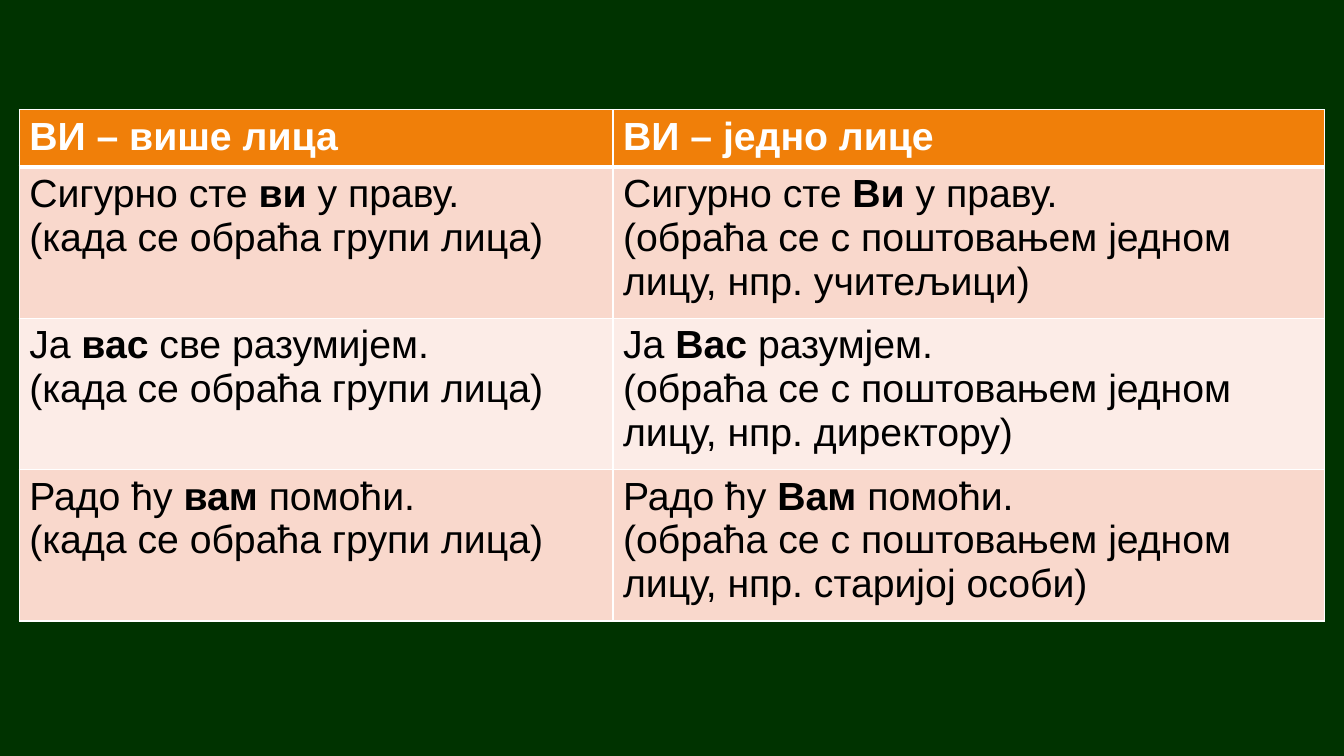
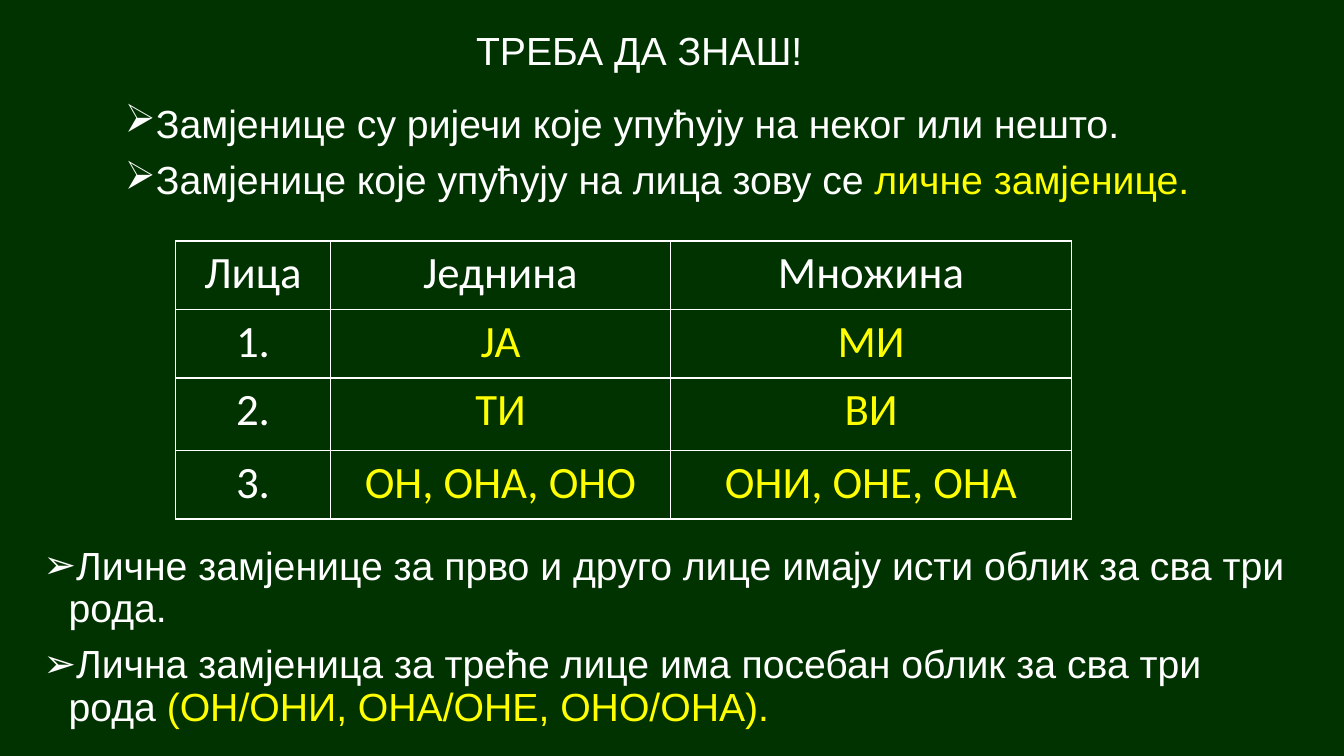
from lxml.etree import SubElement
from pptx import Presentation
from pptx.dml.color import RGBColor
from pptx.enum.text import MSO_ANCHOR, MSO_AUTO_SIZE, PP_ALIGN
from pptx.oxml.ns import qn
from pptx.util import Inches, Pt

COLORS = {
    "background": "003300",
    "white": "FFFFFF",
    "black": "000000",
    "highlight": "FFFF00",
    "header": "F07F09",
    "band_dark": "F9D8CC",
    "band_light": "FCECE7",
}
BLANK_LAYOUT = 6
CONTENT_LAYOUT = 1


def rgb(name):
    """Return the named palette colour."""
    return RGBColor.from_string(COLORS[name])


def add_bullet(paragraph):
    """Give a paragraph an arrow bullet with a hanging indent."""
    properties = paragraph._p.get_or_add_pPr()
    properties.set("marL", str(Inches(0.25)))
    properties.set("indent", str(-Inches(0.25)))
    SubElement(properties, qn("a:buChar"), char="➢")


def write_text(text_frame, text, *, size=28, font="Arial", color="white", accent=None,
               bold=False, accent_bold=False, align=PP_ALIGN.LEFT, line_spacing=1.0,
               space_before=0, bullet=False):
    """Write one paragraph per line, with accented words between asterisks."""
    for index, line in enumerate(text.split("\n")):
        paragraph = text_frame.add_paragraph() if index else text_frame.paragraphs[0]
        paragraph.alignment = align
        paragraph.line_spacing = line_spacing
        paragraph.space_before = Pt(space_before if index else 0)
        if bullet:
            add_bullet(paragraph)
        for part, words in enumerate(line.split("*")):
            if not words:
                continue
            accented = part % 2 == 1
            run = paragraph.add_run()
            run.text = words
            run.font.name = font
            run.font.size = Pt(size)
            run.font.bold = accent_bold if accented else bold
            run.font.color.rgb = rgb(accent if accented and accent else color)


def draw_borders(cell, bottom=1):
    """Draw white borders around a cell."""
    properties = cell._tc.get_or_add_tcPr()
    for side, width in (("L", 1), ("R", 1), ("T", 1), ("B", bottom)):
        line = SubElement(properties, qn(f"a:ln{side}"), w=str(Pt(width)))
        fill = SubElement(line, qn("a:solidFill"))
        SubElement(fill, qn("a:srgbClr"), val=COLORS["white"])


class Deck:
    """Hold the shared style and the current slide."""

    def __init__(self):
        """Start a widescreen presentation."""
        self.presentation = Presentation()
        self.presentation.slide_width = Inches(13.33)
        self.presentation.slide_height = Inches(7.5)
        self.slide = None

    def add_slide(self, layout):
        """Add a slide on the green background."""
        self.slide = self.presentation.slides.add_slide(self.presentation.slide_layouts[layout])
        fill = self.slide.background.fill
        fill.solid()
        fill.fore_color.rgb = rgb("background")

    def fill_frame(self, shape, box, text, **text_format):
        """Place a text shape and write its text from the top."""
        shape.left, shape.top, shape.width, shape.height = map(Inches, box)
        text_frame = shape.text_frame
        text_frame.word_wrap = True
        text_frame.auto_size = MSO_AUTO_SIZE.NONE
        text_frame.vertical_anchor = MSO_ANCHOR.TOP
        write_text(text_frame, text, line_spacing=0.9, **text_format)

    def add_title(self, box, text):
        """Write the centred slide title."""
        self.fill_frame(self.slide.shapes.title, box, text, align=PP_ALIGN.CENTER)

    def add_list(self, shape, box, text):
        """Write a bulleted list with highlighted words."""
        self.fill_frame(shape, box, text, accent="highlight", space_before=10, bullet=True)

    def add_body(self, box, text):
        """Write a list in the body placeholder."""
        self.add_list(self.slide.placeholders[1], box, text)

    def add_text_list(self, box, text):
        """Write a list in a new text box."""
        self.add_list(self.slide.shapes.add_textbox(*map(Inches, box)), box, text)

    def add_table(self, left, top, widths, heights, rows, style_row):
        """Draw a table, asking style_row for each row's fill, bottom border and text format."""
        shape = self.slide.shapes.add_table(
            len(rows), len(widths), Inches(left), Inches(top),
            Inches(sum(widths)), Inches(sum(heights)))
        table = shape.table
        table.horz_banding = False
        for column, width in zip(table.columns, widths):
            column.width = Inches(width)
        for row_index, texts in enumerate(rows):
            table.rows[row_index].height = Inches(heights[row_index])
            fill, bottom, text_format = style_row(row_index)
            for column_index, text in enumerate(texts):
                cell = table.cell(row_index, column_index)
                draw_borders(cell, bottom)
                if fill:
                    cell.fill.solid()
                    cell.fill.fore_color.rgb = rgb(fill)
                else:
                    cell.fill.background()
                write_text(cell.text_frame, text, **text_format)


def style_address_row(index):
    """Style the orange header and the banded rows below it."""
    if index == 0:
        return "header", 3, {"bold": True}
    band = "band_dark" if index % 2 else "band_light"
    return band, 1, {"color": "black", "accent_bold": True}


def style_pronoun_row(index):
    """Style every row of the pronoun grid alike."""
    return None, 1, {"size": 32, "font": "Calibri", "accent": "highlight",
                     "align": PP_ALIGN.CENTER}


def build_address_slide(deck):
    """Compare the plural and the polite form of address."""
    deck.add_slide(BLANK_LAYOUT)
    group = "(када се обраћа групи лица)"
    polite = "(обраћа се с поштовањем једном лицу, нпр. {})"
    examples = [
        ("Сигурно сте *ви* у праву.", "Сигурно сте *Ви* у праву.", "учитељици"),
        ("Ја *вас* све разумијем.", "Ја *Вас* разумјем.", "директору"),
        ("Радо ћу *вам* помоћи.", "Радо ћу *Вам* помоћи.", "старијој особи"),
    ]
    rows = [("ВИ – више лица", "ВИ – једно лице")]
    rows += [(f"{plural}\n{group}", f"{singular}\n{polite.format(person)}")
             for plural, singular, person in examples]
    deck.add_table(0.19, 1.09, [5.89, 7.06], [0.57] + [1.5] * 3, rows, style_address_row)


def build_summary_slide(deck):
    """Sum up the personal pronouns."""
    deck.add_slide(CONTENT_LAYOUT)
    deck.add_title((0.59, 0.26, 11.5, 0.6), "ТРЕБА ДА ЗНАШ!")
    deck.add_text_list(
        (1.14, 0.99, 11.77, 1.2),
        "Замјенице су ријечи које упућују на неког или нешто.\n"
        "Замјенице које упућују на лица зову се *личне замјенице.*")
    rows = [
        ("Лица", "Једнина", "Множина"),
        ("1.", "*ЈА*", "*МИ*"),
        ("2.", "*ТИ*", "*ВИ*"),
        ("3.", "*ОН, ОНА, ОНО*", "*ОНИ, ОНЕ, ОНА*"),
    ]
    deck.add_table(1.74, 2.39, [1.54, 3.37, 3.98], [0.68, 0.68, 0.72, 0.68],
                   rows, style_pronoun_row)
    deck.add_body(
        (0.33, 5.37, 12.58, 2),
        "Личне замјенице за прво и друго лице имају исти облик за сва три рода.\n"
        "Лична замјеница за треће лице има посебан облик за сва три рода "
        "*(ОН/ОНИ, ОНА/ОНЕ, ОНО/ОНА).*")


def main():
    """Build both slides and save them."""
    deck = Deck()
    build_address_slide(deck)
    build_summary_slide(deck)
    deck.presentation.save("out.pptx")


if __name__ == "__main__":
    main()
